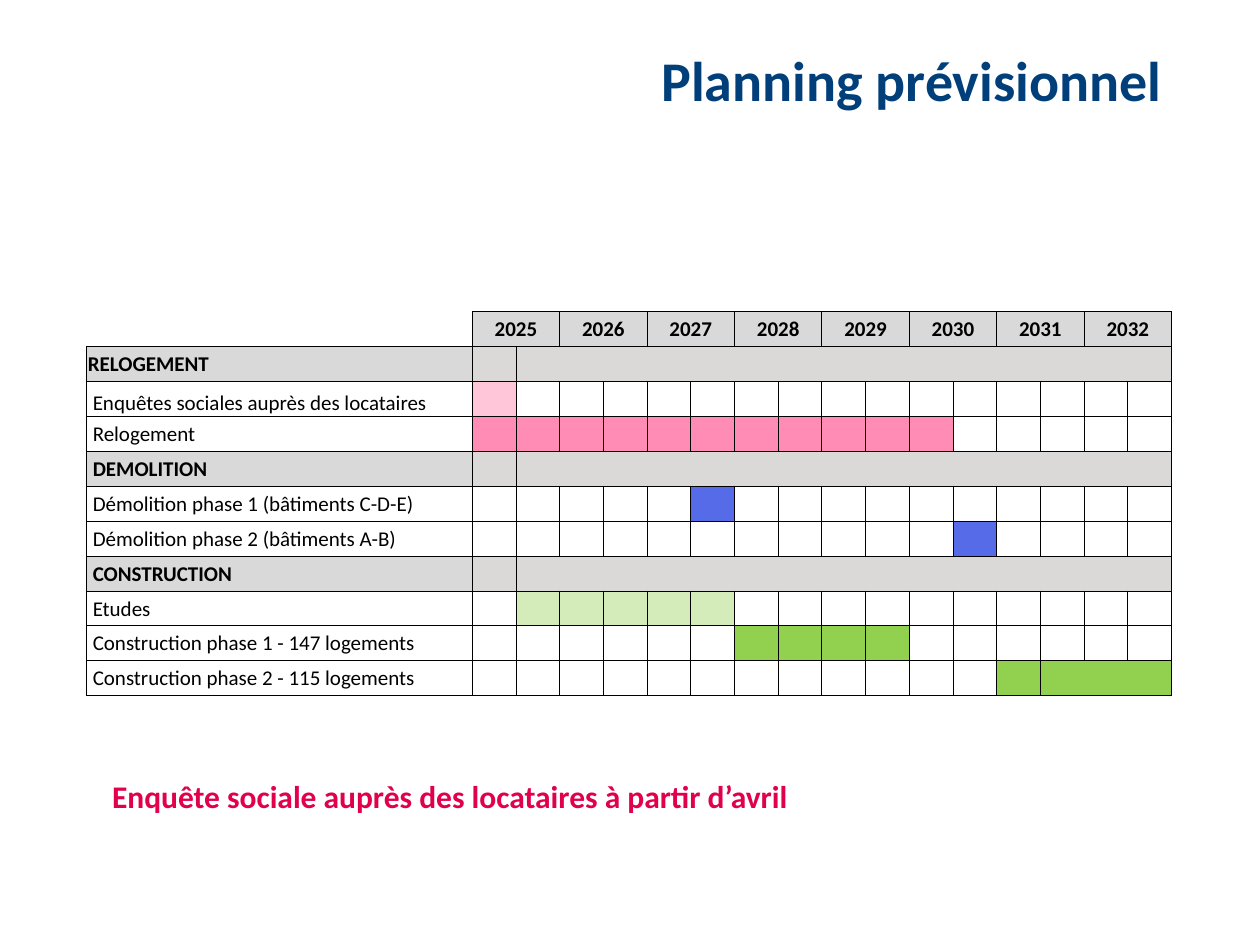
from lxml.etree import SubElement
from pptx import Presentation
from pptx.dml.color import RGBColor
from pptx.enum.text import MSO_ANCHOR, MSO_AUTO_SIZE, PP_ALIGN
from pptx.oxml.ns import qn
from pptx.util import Cm, Pt

HUES = {
    "navy": "003F7A", "red": "E0004D", "black": "000000", "white": "FFFFFF",
    "head": "D9D9D9", "band": "DBD9D7", "blush": "FFC6DA", "pink": "FF8CB5",
    "blue": "556BE8", "pale": "D3ECB9", "green": "92D050",
}
YEARS = range(2025, 2033)
HALVES = 2 * len(YEARS)
LABEL = 7.77
SPAN = 14.1
HEIGHT = 7.75
PLAIN = "{2D5ABB26-0587-4C30-8999-92F81FD0307C}"
INSET = {"margin_left": Cm(0.02), "margin_right": Cm(0.02),
         "margin_top": Cm(0.02), "margin_bottom": 0,
         "vertical_anchor": MSO_ANCHOR.MIDDLE}
INDENT = {"margin_left": Cm(0.12)}
LOW = {"vertical_anchor": MSO_ANCHOR.BOTTOM}

# name, bar hue, first half-year, last half-year, label format
ROWS = [
    ("RELOGEMENT", None, 0, 0, {}),
    ("Enquêtes sociales auprès des locataires", "blush", 1, 1, INDENT | LOW),
    ("Relogement", "pink", 1, 11, INDENT),
    ("DEMOLITION", None, 0, 0, INDENT),
    ("Démolition phase 1 (bâtiments C-D-E)", "blue", 6, 6, INDENT),
    ("Démolition phase 2 (bâtiments A-B)", "blue", 12, 12, INDENT),
    ("CONSTRUCTION", None, 0, 0, INDENT),
    ("Etudes", "pale", 2, 6, INDENT),
    ("Construction phase 1 - 147 logements", "green", 7, 10, INDENT),
    ("Construction phase 2 - 115 logements", "green", 13, 16, INDENT),
]
JOINED = {"Construction phase 2 - 115 logements"}


def put(item, values):
    for name, value in values.items():
        setattr(item, name, value)


def write(frame, text, size, hue, bold=True, **look):
    line = frame.paragraphs[0]
    put(line, look)
    run = line.add_run()
    run.text = text
    put(run.font, {"name": "Calibri", "size": Pt(size), "bold": bold})
    run.font.color.rgb = RGBColor.from_string(HUES[hue])


def edge(cell, sides):
    props = cell._tc.get_or_add_tcPr()
    for side in "LRTB":
        if side in sides:
            line = SubElement(props, qn("a:ln" + side), w=str(Pt(0.5)))
            fill = SubElement(line, qn("a:solidFill"))
            SubElement(fill, qn("a:srgbClr"), val=HUES["black"])


def style(cell, sides, hue=None, extra=None):
    put(cell, INSET | (extra or {}))
    edge(cell, sides)
    if hue:
        cell.fill.solid()
        cell.fill.fore_color.rgb = RGBColor.from_string(HUES[hue])
    else:
        cell.fill.background()


def blank(cell, sides, hue=None):
    style(cell, sides, hue)
    SubElement(cell.text_frame.paragraphs[0]._p, qn("a:endParaRPr"), sz="1200")


def add_years(table):
    blank(table.cell(0, 0), "RB")
    for index, year in enumerate(YEARS):
        first, last = (table.cell(0, 2 * index + step) for step in (1, 2))
        first.merge(last)
        blank(last, "LRTB", "head")
        style(first, "LRTB", "head")
        write(first.text_frame, str(year), 12, "black", alignment=PP_ALIGN.CENTER)


def sides_of(half, name, hue, start):
    left, right = half % 2 == 1, half % 2 == 0
    if hue is None or (name in JOINED and half >= start):
        left = half == max(start, 1)
        right = half == HALVES
    return "TB" + "L" * left + "R" * right


def add_row(table, row, name, hue, start, end, look):
    label = table.cell(row, 0)
    style(label, "LRTB", "white" if hue else "head", look)
    write(label.text_frame, name, 12, "black", bold=hue is None)
    for half in range(1, HALVES + 1):
        tint = hue if start <= half <= end else "white"
        blank(table.cell(row, half), sides_of(half, name, hue, start),
              tint if hue else "band")


def add_plan(slide):
    count = len(ROWS) + 1
    frame = slide.shapes.add_table(count, HALVES + 1, Cm(1.75), Cm(6.28),
                                   Cm(LABEL + SPAN), Cm(HEIGHT))
    table = frame.table
    put(table, {"first_row": False, "horz_banding": False})
    table._tbl.tblPr.find(qn("a:tableStyleId")).text = PLAIN
    for index, column in enumerate(table.columns):
        column.width = Cm(SPAN / HALVES if index else LABEL)
    for row in table.rows:
        row.height = Cm(HEIGHT / count)
    add_years(table)
    for row, entry in enumerate(ROWS, 1):
        add_row(table, row, *entry)


def add_title(slide):
    title = slide.shapes.title
    put(title, {"left": Cm(1.45), "top": Cm(1.09),
                "width": Cm(22.23), "height": Cm(1.19)})
    put(title.text_frame, {"vertical_anchor": MSO_ANCHOR.MIDDLE,
                           "auto_size": MSO_AUTO_SIZE.NONE})
    write(title.text_frame, "Planning prévisionnel", 32, "navy",
          alignment=PP_ALIGN.RIGHT, line_spacing=0.9)


def add_note(slide):
    box = slide.shapes.add_textbox(Cm(2.01), Cm(15.54), Cm(14.38), Cm(1.02))
    put(box.text_frame, {"word_wrap": False,
                         "auto_size": MSO_AUTO_SIZE.SHAPE_TO_FIT_TEXT})
    write(box.text_frame, "Enquête sociale auprès des locataires à partir d’avril",
          18, "red")


def main():
    deck = Presentation()
    put(deck, {"slide_width": Cm(25.4), "slide_height": Cm(19.05)})
    slide = deck.slides.add_slide(deck.slide_layouts[5])
    add_title(slide)
    add_plan(slide)
    add_note(slide)
    deck.save("out.pptx")


if __name__ == "__main__":
    main()
